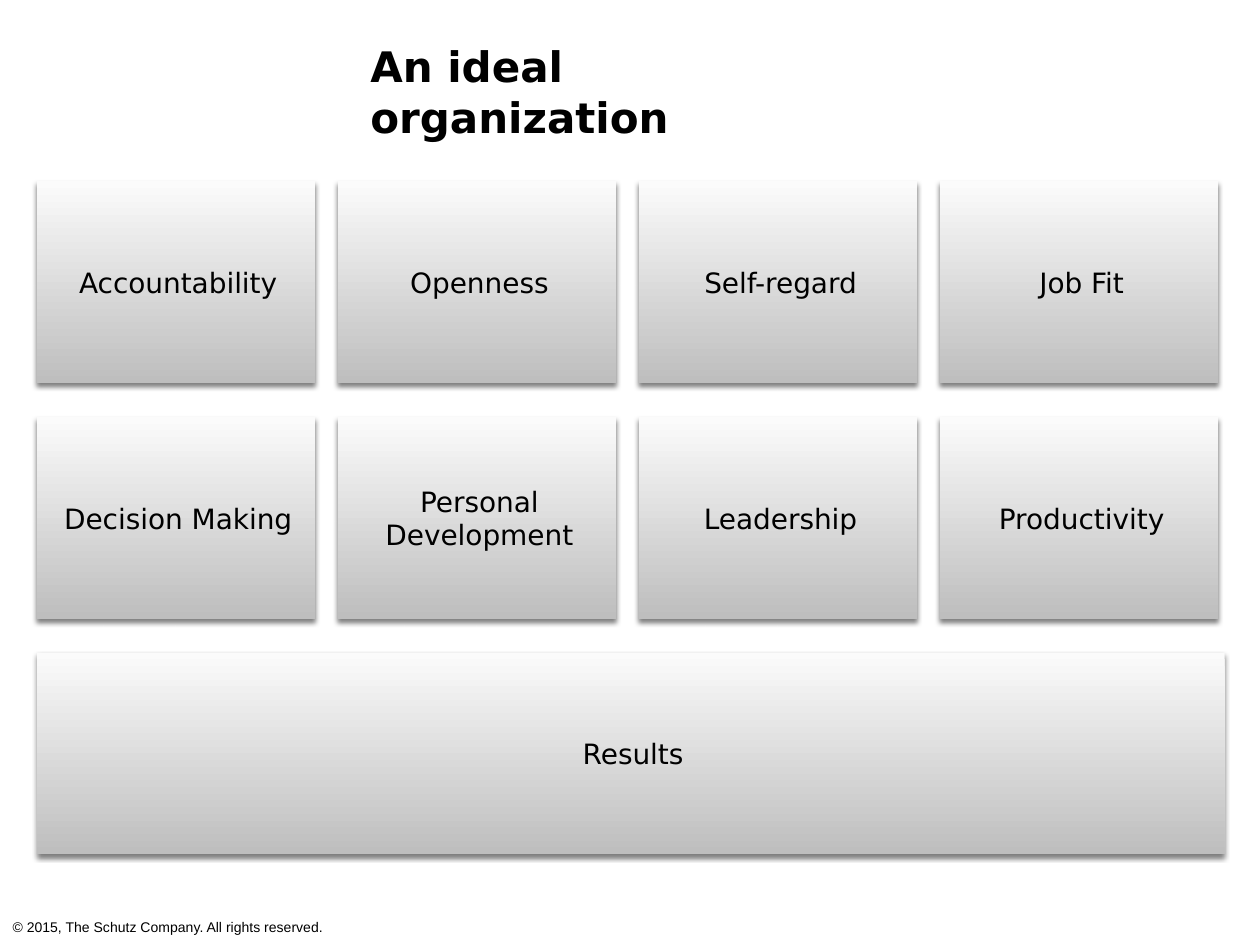
from pptx import Presentation, util as u
from pptx.dml.color import RGBColor
from pptx.enum import shapes, text
from pptx.oxml import parse_xml
from pptx.oxml.ns import nsdecls, qn

# Content
TITLE = "An ideal organization"
ROWS = [
    ["Accountability", "Openness", "Self-regard", "Job Fit"],
    ["Decision Making", "Personal Development", "Leadership", "Productivity"],
    ["Results"],
]
COPYRIGHT = "© 2015, The Schutz Company. All rights reserved."

# Grid, in inches
LEFT, TOP = 0.29, 1.44
COL_STEP, ROW_STEP = 2.39, 1.87
BOX_W, BOX_H, FULL_W = 2.21, 1.6, 9.43

SHADOW = (
    f'<a:outerShdw {nsdecls("a")} blurRad="{u.Pt(3)}" dist="{u.Pt(2)}" '
    'dir="5400000" algn="ctr" rotWithShape="0">'
    '<a:srgbClr val="000000"><a:alpha val="50000"/></a:srgbClr></a:outerShdw>'
)


def color(value):
    return RGBColor.from_string(value)


def write(sp, words, font, size, align, anchor, inset, bold=False, indent=0.0):
    tf = sp.text_frame
    tf.word_wrap = True
    tf.auto_size = text.MSO_AUTO_SIZE.NONE
    tf.vertical_anchor = anchor
    tf.margin_left = tf.margin_right = u.Inches(inset)
    tf.margin_top = tf.margin_bottom = u.Inches(inset)
    tf.text = words
    p = tf.paragraphs[0]
    p.alignment = align
    p._p.get_or_add_pPr().set("marL", str(u.Inches(indent)))
    r = p.runs[0]
    r.font.name, r.font.size, r.font.bold = font, u.Pt(size), bold
    r.font.color.rgb = color("000000")


def add_box(s, words, left, top, width):
    sp = s.shapes.add_shape(shapes.MSO_SHAPE.RECTANGLE,
                            *map(u.Inches, (left, top, width, BOX_H)))
    sp.fill.gradient()
    sp.fill.gradient_angle = 270
    for stop, position, shade in zip(sp.fill.gradient_stops, (0, 1), ("FBFBFB", "BEBEBE")):
        stop.position, stop.color.rgb = position, color(shade)
    sp.line.fill.background()
    sp.shadow.inherit = False
    sp._element.spPr.find(qn("a:effectLst")).append(parse_xml(SHADOW))
    write(sp, words, "DejaVu Sans", 16, text.PP_ALIGN.CENTER,
          text.MSO_ANCHOR.MIDDLE, 0, indent=0.04)


prs = Presentation()
prs.slide_width, prs.slide_height = u.Inches(10), u.Inches(7.5)
s = prs.slides.add_slide(prs.slide_layouts[5])

# Title, with a wide right inset so that it breaks after the first word
title = s.shapes.title
title.left, title.top, title.width, title.height = map(u.Inches, (2.88, 0.47, 4.23, 0.51))
write(title, TITLE, "DejaVu Sans", 24, text.PP_ALIGN.LEFT,
      text.MSO_ANCHOR.MIDDLE, 0.06, bold=True)
title.text_frame.margin_right = u.Inches(0.4)

# Building blocks
for row, labels in enumerate(ROWS):
    width = FULL_W if len(labels) == 1 else BOX_W
    for col, label in enumerate(labels):
        add_box(s, label, LEFT + col * COL_STEP, TOP + row * ROW_STEP, width)

# Copyright line
footer = s.shapes.add_textbox(*map(u.Inches, (0, 7.23, 10, 0.24)))
write(footer, COPYRIGHT, "Arial", 8, text.PP_ALIGN.LEFT,
      text.MSO_ANCHOR.TOP, 0.06, indent=0.04)

prs.save("out.pptx")
